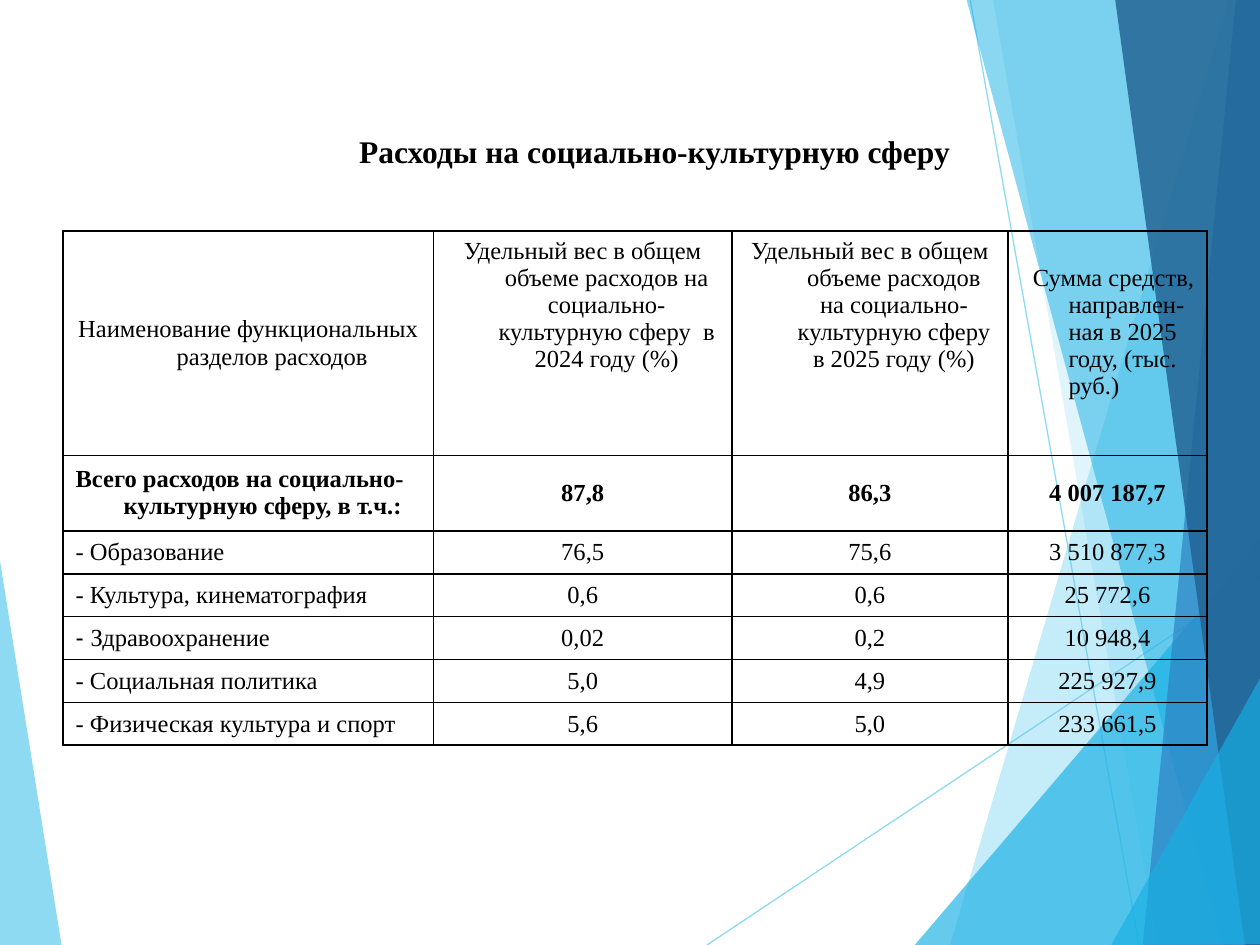
from lxml import etree
from pptx import Presentation
from pptx.dml.color import RGBColor
from pptx.enum.shapes import MSO_CONNECTOR
from pptx.enum.text import MSO_ANCHOR, MSO_AUTO_SIZE, PP_ALIGN
from pptx.oxml import parse_xml
from pptx.oxml.ns import nsdecls, qn
from pptx.util import Pt

STRAIGHT = MSO_CONNECTOR.STRAIGHT
TOP, MIDDLE = MSO_ANCHOR.TOP, MSO_ANCHOR.MIDDLE
LEFT, CENTER, JUSTIFY = PP_ALIGN.LEFT, PP_ALIGN.CENTER, PP_ALIGN.JUSTIFY
FIT_SHAPE = MSO_AUTO_SIZE.SHAPE_TO_FIT_TEXT

BLACK = RGBColor(0x00, 0x00, 0x00)
SKY = RGBColor(0x5F, 0xCB, 0xEF)
CYAN = RGBColor(0x17, 0xB0, 0xE4)
BLUE = RGBColor(0x2E, 0x83, 0xC3)
NAVY = RGBColor(0x22, 0x62, 0x92)
SERIF = "Times New Roman"
HANGING = 27.4

FACETS = [  # colour, opacity in percent, corners in points
    (SKY, 36, [(702, 0), (542.9, 540), (721.4, 540.7), (720.7, 0.7)]),
    (SKY, 20, [(567.4, -0.7), (661.7, 540), (720.7, 540), (720.7, -0.7)]),
    (CYAN, 66, [(522.7, 540), (720, 308.9), (720.7, 540)]),
    (CYAN, 50, [(552.2, -0.7), (698.4, 540), (720.7, 539.3), (720.7, -0.7)]),
    (BLUE, 70, [(706.3, -0.7), (653, 540), (720.7, 540), (720, -0.7)]),
    (NAVY, 82, [(637.2, -0.7), (711.4, 540), (721.4, 540), (720, -0.7)]),
    (CYAN, 66, [(635, 540), (721.4, 385.2), (721.4, 539.3)]),
    (SKY, 70, [(-0.7, 316), (35.3, 540.7), (-0.7, 540)]),
]
RAYS = [(404, 540, 720.7, 329), (554.4, 0, 650.9, 540)]

COLUMN_WIDTHS = [211.7, 170.6, 157.7, 113.8]
ROW_HEIGHTS = [128.2, 43.2] + [24.5] * 5
ROWS = [
    ("Наименование функциональных разделов расходов",
     "Удельный вес в общем объеме расходов на социально-культурную сферу  в 2024 году (%)",
     "Удельный вес в общем объеме расходов на социально-культурную сферу в 2025 году (%)",
     "Сумма средств, направлен-ная в 2025 году, (тыс. руб.)"),
    ("Всего расходов на социально-культурную сферу, в т.ч.:", "87,8", "86,3", "4 007 187,7"),
    ("- Образование", "76,5", "75,6", "3 510 877,3"),
    ("- Культура, кинематография", "0,6", "0,6", "25 772,6"),
    ("- Здравоохранение", "0,02", "0,2", "10 948,4"),
    ("- Социальная политика", "5,0", "4,9", "225 927,9"),
    ("- Физическая культура и спорт", "5,6", "5,0", "233 661,5"),
]


def set_opacity(color_format_parent, percent):
    """Add an alpha value to the first RGB colour below the given element."""
    color = next(color_format_parent.iter(qn("a:srgbClr")))
    etree.SubElement(color, qn("a:alpha")).set("val", str(percent * 1000))


def add_borders(cell):
    """Draw thin black lines on all four sides of a table cell."""
    for position, side in enumerate(("lnL", "lnR", "lnT", "lnB")):
        border = parse_xml(
            f'<a:{side} {nsdecls("a")} w="{Pt(1)}"><a:solidFill>'
            f'<a:srgbClr val="{BLACK}"/></a:solidFill></a:{side}>')
        cell._tc.get_or_add_tcPr().insert(position, border)


deck = Presentation()
deck.slide_width, deck.slide_height = Pt(720), Pt(540)
page = deck.slides.add_slide(deck.slide_layouts[5])
shapes = page.shapes

# Decorative rays and translucent facets
for x1, y1, x2, y2 in RAYS:
    ray = shapes.add_connector(STRAIGHT, Pt(x1), Pt(y1), Pt(x2), Pt(y2))
    ray.line.color.rgb = SKY
    ray.line.width = Pt(0.75)
    set_opacity(ray.line._get_or_add_ln(), 70)
    etree.SubElement(ray._element.spPr, qn("a:effectLst"))

for color, opacity, corners in FACETS:
    start, *others = [(Pt(x), Pt(y)) for x, y in corners]
    builder = shapes.build_freeform(*start)
    builder.add_line_segments(others, close=True)
    facet = builder.convert_to_shape()
    facet.shadow.inherit = False
    facet.fill.solid()
    facet.fill.fore_color.rgb = color
    set_opacity(facet._element.spPr, opacity)
    facet.line.fill.background()

# Title, brought in front of the facets
title = shapes.title
shapes._spTree.append(title._element)
title.left, title.top, title.width, title.height = Pt(198), Pt(72), Pt(361), Pt(29)
frame = title.text_frame
frame.text = "Расходы на социально-культурную сферу"
frame.word_wrap = True
frame.auto_size = FIT_SHAPE
frame.vertical_anchor = MIDDLE
para = frame.paragraphs[0]
para.alignment = JUSTIFY
font = para.runs[0].font
font.name, font.size, font.bold = SERIF, Pt(18), True
font.color.rgb = BLACK

# Table of spending
table = shapes.add_table(len(ROWS), len(COLUMN_WIDTHS), Pt(36), Pt(132),
                         Pt(sum(COLUMN_WIDTHS)), Pt(sum(ROW_HEIGHTS))).table
table.first_row = table.horz_banding = False
for column, width in zip(table.columns, COLUMN_WIDTHS):
    column.width = Pt(width)
for row, height in zip(table.rows, ROW_HEIGHTS):
    row.height = Pt(height)

for i, texts in enumerate(ROWS):
    for j, text in enumerate(texts):
        cell = table.cell(i, j)
        cell.fill.background()
        add_borders(cell)
        is_sum_heading = i == 0 and j == 3
        cell.vertical_anchor = TOP if i == 0 and j > 0 else MIDDLE
        para = cell.text_frame.paragraphs[0]
        para.text = text
        para.alignment = LEFT if is_sum_heading or (i > 0 and j == 0) else CENTER
        first_line = -HANGING
        if is_sum_heading:
            cell.margin_top = Pt(19)
            first_line += 7
        properties = para._p.get_or_add_pPr()
        properties.set("marL", str(Pt(HANGING)))
        properties.set("indent", str(Pt(first_line)))
        if text == "- Здравоохранение":
            para.text = "- "
            para.add_run().text = text[2:]
        for span in para.runs:
            span.font.name = "Arial" if span.text == "- " else SERIF
            span.font.size = Pt(14)
            span.font.bold = i == 1
            span.font.color.rgb = BLACK

deck.save("out.pptx")
